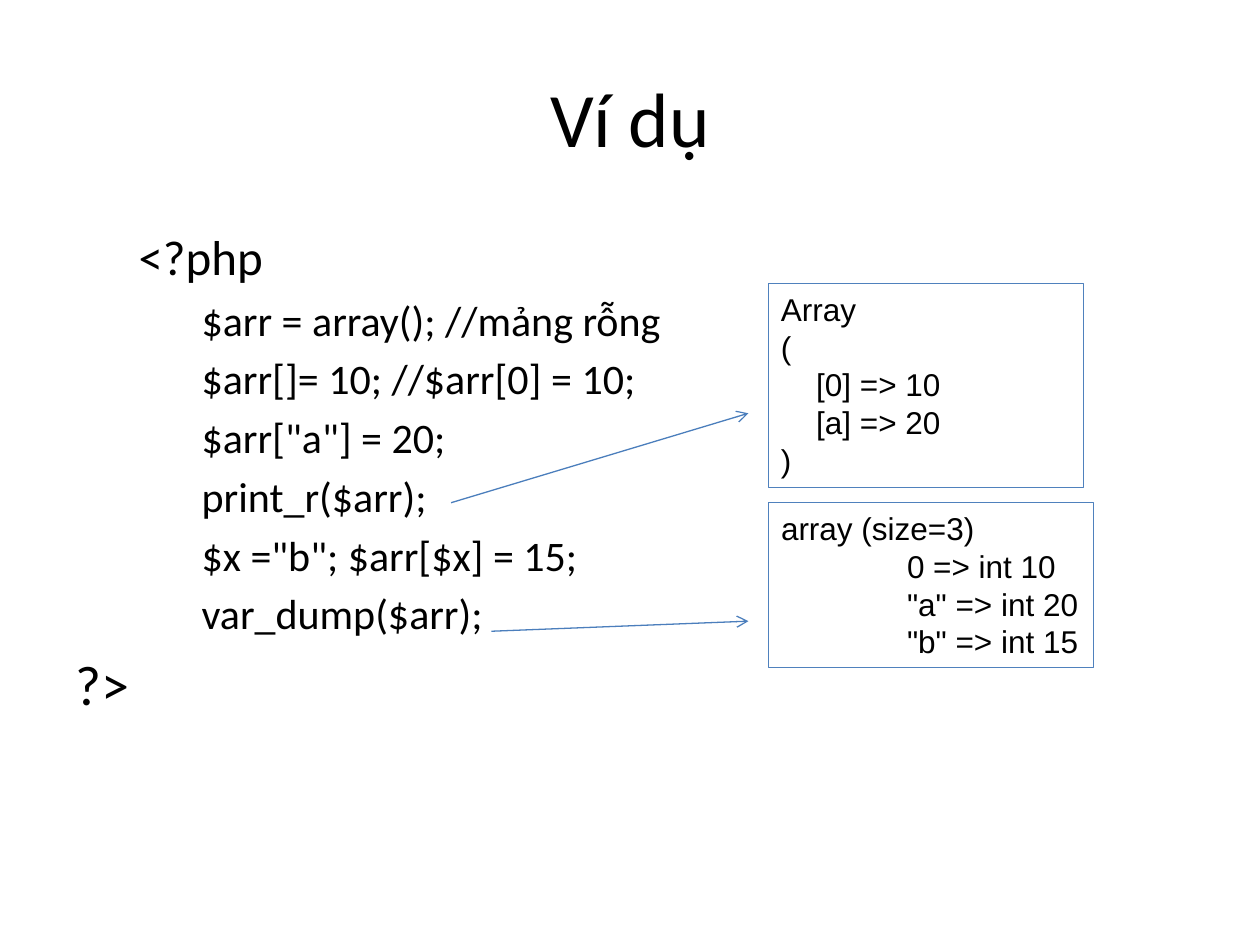
import dataclasses

import lxml.etree
import pptx
import pptx.dml.color
import pptx.enum.shapes
import pptx.enum.text
import pptx.oxml.ns
import pptx.util

Inches = pptx.util.Inches
Pt = pptx.util.Pt
qn = pptx.oxml.ns.qn


@dataclasses.dataclass
class Line:
    text: str
    left: float = 0
    hanging: float = 0
    level: int = 0
    size: int = 18


@dataclasses.dataclass
class OutputBox:
    top: float
    width: float
    height: float
    lines: list[Line]


@dataclasses.dataclass
class Arrow:
    start: tuple[float, float]
    end: tuple[float, float]


def rgb(value: str) -> pptx.dml.color.RGBColor:
    return pptx.dml.color.RGBColor.from_string(value)


def add_run(p, text: str, size: int, font: str) -> None:
    r = p.add_run()
    r.text = text
    r.font.size = Pt(size)
    r.font.name = font
    r.font.color.rgb = rgb("000000")


def write_lines(tf, lines: list[Line], font: str) -> None:
    for i, line in enumerate(lines):
        p = tf.add_paragraph() if i else tf.paragraphs[0]
        p.level = line.level
        p.alignment = pptx.enum.text.PP_ALIGN.LEFT
        pPr = p._p.get_or_add_pPr()
        pPr.set("marL", str(Inches(line.left)))
        pPr.set("indent", str(Inches(-line.hanging)))
        lxml.etree.SubElement(pPr, qn("a:buNone"))
        add_run(p, line.text, line.size, font)


def place(sp, left: float, top: float, width: float, height: float) -> None:
    sp.left, sp.top = Inches(left), Inches(top)
    sp.width, sp.height = Inches(width), Inches(height)


def draw_output(s, box: OutputBox) -> None:
    sp = s.shapes.add_textbox(Inches(6.1), Inches(box.top), Inches(box.width), Inches(box.height))
    sp.line.color.rgb = rgb("4F81BD")
    sp.line.width = Pt(0.75)
    tf = sp.text_frame
    tf.word_wrap = True
    tf.margin_right = 0
    write_lines(tf, box.lines, "Arial")


def draw_arrow(s, arrow: Arrow) -> None:
    points = [Inches(v) for v in arrow.start + arrow.end]
    sp = s.shapes.add_connector(pptx.enum.shapes.MSO_CONNECTOR.STRAIGHT, *points)
    sp.line.color.rgb = rgb("4B7EBC")
    sp.line.width = Pt(0.75)
    lxml.etree.SubElement(sp.line._get_or_add_ln(), qn("a:tailEnd"), type="arrow")
    lxml.etree.SubElement(sp._element.spPr, qn("a:effectLst"))


STATEMENTS = [
    "$arr = array(); //mảng rỗng",
    "$arr[]= 10; //$arr[0] = 10;",
    '$arr["a"] = 20;',
    "print_r($arr);",
    '$x ="b"; $arr[$x] = 15;',
    "var_dump($arr);",
]
CODE = [
    Line("<?php", 0.81, 0.31, 1, 28),
    *(Line(text, 1.25, 0.25, 2, 24) for text in STATEMENTS),
    Line("?>", size=32),
]
OUTPUTS = [
    OutputBox(2.25, 2.5, 1.62, [
        Line("Array"), Line("("), Line("[0] => 10", 0.28), Line("[a] => 20", 0.28), Line(")"),
    ]),
    OutputBox(3.99, 2.58, 1.31, [
        Line("array (size=3)"), Line("0 => int 10", 1), Line('"a" => int 20', 1), Line('"b" => int 15', 1),
    ]),
]
ARROWS = [Arrow((3.9, 5.01), (5.94, 4.93)), Arrow((3.58, 3.99), (5.94, 3.28))]


def main() -> None:
    prs = pptx.Presentation()
    prs.slide_width, prs.slide_height = Inches(10), Inches(7.5)
    s = prs.slides.add_slide(prs.slide_layouts[3])
    title, body, spare = s.placeholders
    spare._element.getparent().remove(spare._element)

    place(title, 0.5, 0.3, 9, 1.25)
    p = title.text_frame.paragraphs[0]
    p.alignment = pptx.enum.text.PP_ALIGN.CENTER
    add_run(p, "Ví dụ", 44, "Calibri")

    place(body, 0.5, 1.75, 4.97, 4.95)
    body.text_frame.auto_size = pptx.enum.text.MSO_AUTO_SIZE.NONE
    write_lines(body.text_frame, CODE, "Calibri")

    for box in OUTPUTS:
        draw_output(s, box)
    for arrow in ARROWS:
        draw_arrow(s, arrow)
    prs.save("out.pptx")


if __name__ == "__main__":
    main()
